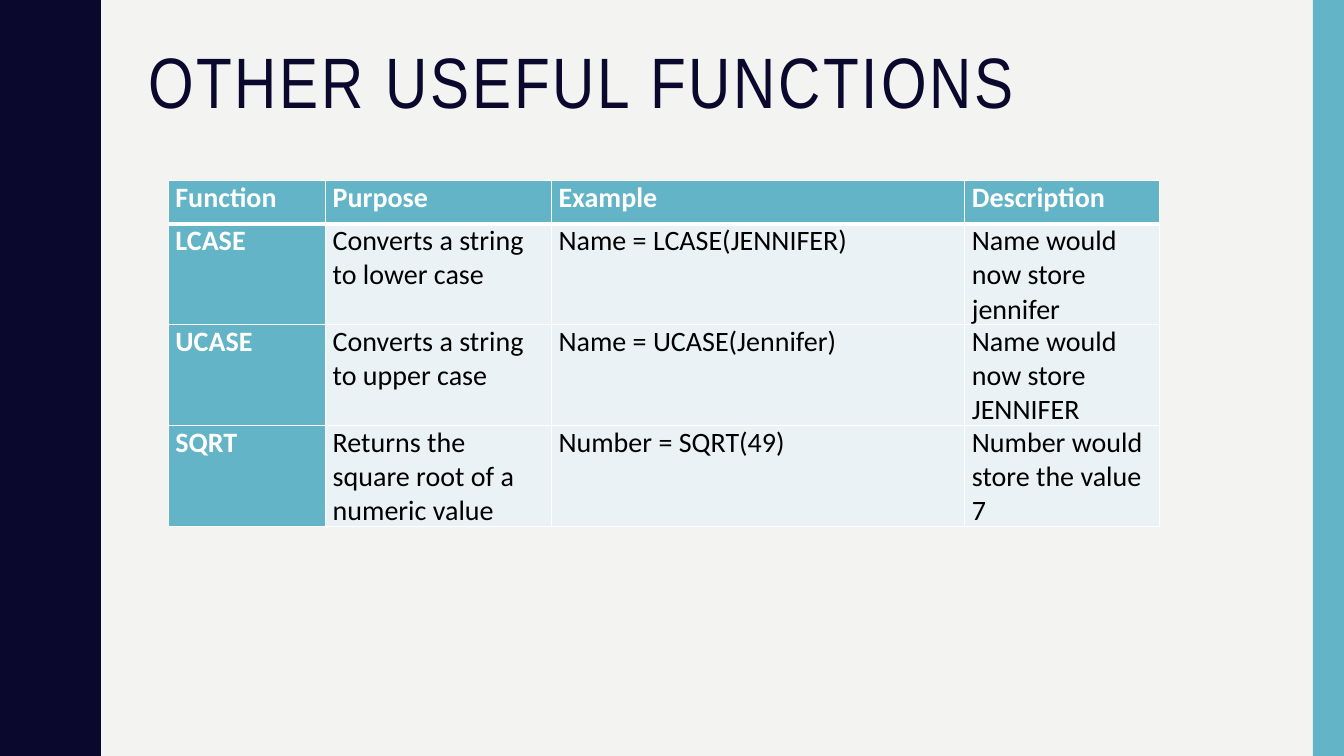
from lxml.etree import SubElement
from pptx import Presentation
from pptx.dml.color import RGBColor
from pptx.enum.shapes import MSO_SHAPE
from pptx.enum.text import MSO_ANCHOR
from pptx.oxml.ns import qn
from pptx.util import Inches, Pt

HUES = {"navy": "0B082E", "teal": "62B4C6", "pale": "EAF2F5",
        "back": "F3F3F2", "white": "FFFFFF", "black": "000000"}
WAVE = [(0.78, 0), (0.78, 0.07), (0.79, 0.14), (0.8, 0.2), (0.81, 0.25),
        (0.83, 0.29), (0.85, 0.33), (0.87, 0.38), (0.89, 0.42), (0.91, 0.46),
        (0.93, 0.5), (0.95, 0.55), (0.96, 0.61), (0.97, 0.68), (0.97, 0.75)]
COLS = [1.56, 2.24, 4.1, 1.93]
TALL = [0.43, 0.86, 0.86, 0.86]
ROWS = [
    ["Function", "Purpose", "Example", "Description"],
    ["LCASE", "Converts a string to lower case", "Name = LCASE(JENNIFER)",
     "Name would now store jennifer"],
    ["UCASE", "Converts a string to upper case", "Name = UCASE(Jennifer)",
     "Name would now store JENNIFER"],
    ["SQRT", "Returns the square root of a numeric value", "Number = SQRT(49)",
     "Number would store the value 7"],
]


class Deck:
    def __init__(self, slide):
        self.slide = slide
        self.paint(slide.background.fill, "back")

    def paint(self, fill, hue):
        fill.solid()
        fill.fore_color.rgb = RGBColor.from_string(HUES[hue])

    def finish(self, shape, hue):
        shape.shadow.inherit = False
        shape.line.fill.background()
        self.paint(shape.fill, hue)

    def style(self, frame, face, size, hue, bold=False):
        for part in frame.paragraphs:
            for run in part.runs:
                run.font.name = face
                run.font.size = Pt(size)
                run.font.bold = bold
                run.font.color.rgb = RGBColor.from_string(HUES[hue])

    def wave(self, half, count, hue):
        step = half[-1][1]
        edge = [half[0]]
        for i in range(count):
            side = half if i % 2 == 0 else [(x, step - y) for x, y in half[::-1]]
            edge += [(x, y + i * step) for x, y in side[1:]]
        pen = self.slide.shapes.build_freeform(0, 0, scale=Inches(1))
        pen.add_line_segments(edge + [(0, count * step)], close=True)
        self.finish(pen.convert_to_shape(), hue)

    def bar(self, x, y, w, h, hue):
        box = self.slide.shapes.add_shape(
            MSO_SHAPE.RECTANGLE, Inches(x), Inches(y), Inches(w), Inches(h))
        self.finish(box, hue)

    def title(self, text, x, y, w, h):
        frame = self.slide.shapes.add_textbox(
            Inches(x), Inches(y), Inches(w), Inches(h)).text_frame
        frame.word_wrap = True
        frame.vertical_anchor = MSO_ANCHOR.TOP
        frame.text = text
        frame.paragraphs[0].line_spacing = 0.9
        self.style(frame, "Arial Narrow", 51, "navy")
        frame.paragraphs[0].runs[0].font._element.set("spc", "200")

    def edges(self, cell, top, bottom):
        props = cell._tc.get_or_add_tcPr()
        for side, width in zip("LRTB", (1, 1, top, bottom)):
            line = SubElement(props, qn(f"a:ln{side}"), w=str(Pt(width)))
            fill = SubElement(line, qn("a:solidFill"))
            SubElement(fill, qn("a:srgbClr"), val=HUES["white"])

    def cell(self, cell, text, row, col):
        head = row == 0 or col == 0
        cell.margin_left = cell.margin_right = Inches(0.07)
        cell.margin_top = cell.margin_bottom = 0
        self.edges(cell, 3 if row == 1 else 1, 3 if row == 0 else 1)
        self.paint(cell.fill, "teal" if head else "pale")
        cell.text_frame.text = text
        self.style(cell.text_frame, "Calibri", 20,
                   "white" if head else "black", head)

    def table(self, rows, x, y, cols, tall):
        grid = self.slide.shapes.add_table(
            len(rows), len(cols), Inches(x), Inches(y),
            Inches(sum(cols)), Inches(sum(tall))).table
        grid.horz_banding = False
        for col, width in zip(grid.columns, cols):
            col.width = Inches(width)
        for r, texts in enumerate(rows):
            grid.rows[r].height = Inches(tall[r])
            for c, text in enumerate(texts):
                self.cell(grid.cell(r, c), text, r, c)


def main():
    show = Presentation()
    show.slide_width, show.slide_height = Inches(13.33), Inches(7.5)
    deck = Deck(show.slides.add_slide(show.slide_layouts[6]))
    deck.wave(WAVE, 10, "navy")
    deck.bar(13.02, 0, 0.31, 7.5, "teal")
    deck.title("OTHER USEFUL FUNCTIONS", 1.37, 0.42, 11.13, 1.63)
    deck.table(ROWS, 1.67, 1.79, COLS, TALL)
    show.save("out.pptx")


if __name__ == "__main__":
    main()
